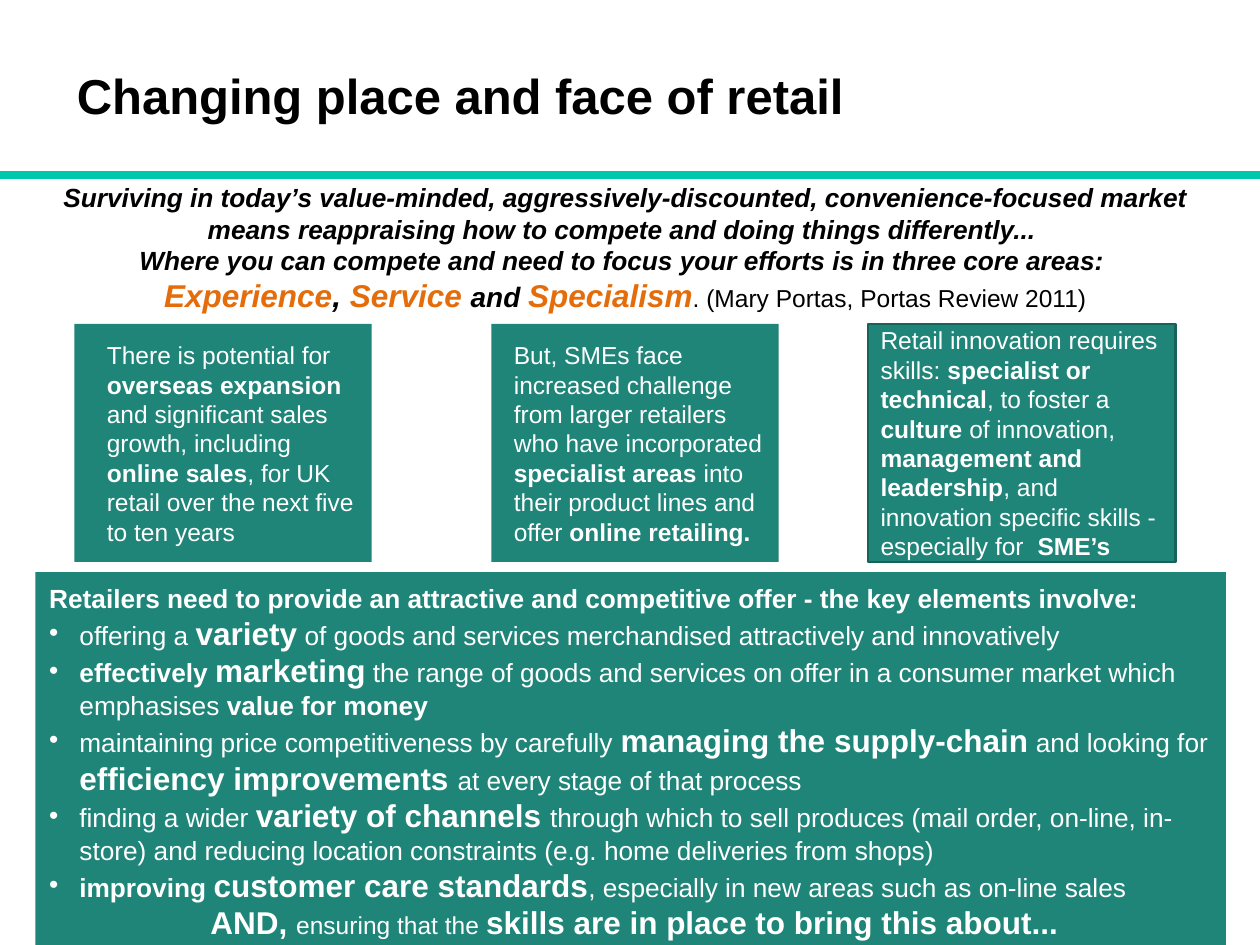
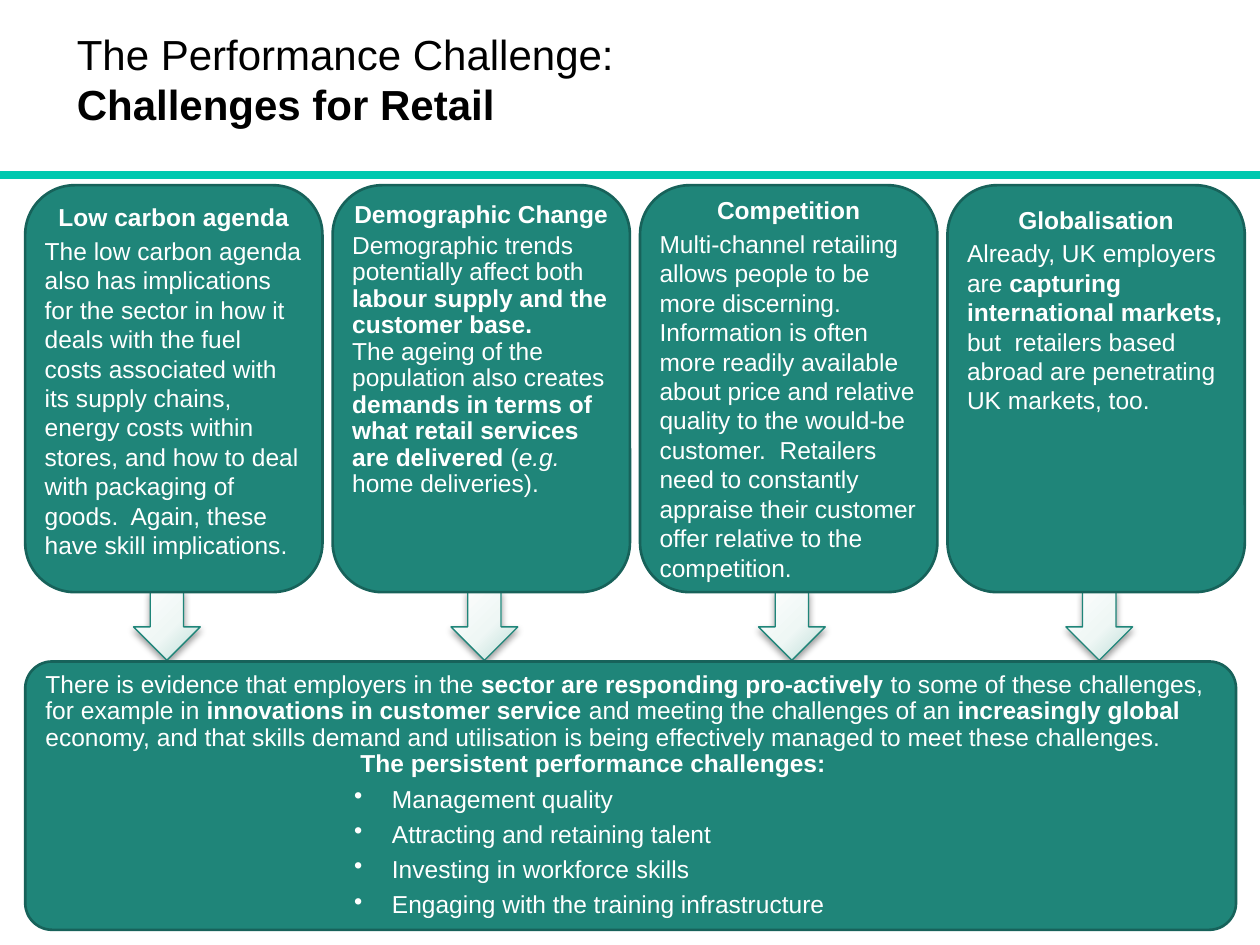
from lxml import etree
from pptx import Presentation
from pptx.dml.color import RGBColor
from pptx.enum.shapes import MSO_CONNECTOR, MSO_SHAPE
from pptx.enum.text import MSO_ANCHOR, MSO_AUTO_SIZE, PP_ALIGN
from pptx.oxml import parse_xml
from pptx.oxml.ns import nsdecls, qn
from pptx.util import Inches, Pt

RECT, ROUND, ARROW = MSO_SHAPE.RECTANGLE, MSO_SHAPE.ROUNDED_RECTANGLE, MSO_SHAPE.DOWN_ARROW
TOP, MIDDLE = MSO_ANCHOR.TOP, MSO_ANCHOR.MIDDLE
LEFT, CENTER = PP_ALIGN.LEFT, PP_ALIGN.CENTER
STRAIGHT, NO_FIT = MSO_CONNECTOR.STRAIGHT, MSO_AUTO_SIZE.NONE

FONT = "Arial"
TEAL, DARK_TEAL, BAND, ORANGE = "1F8579", "17625A", "00C8AF", "E46C0A"
BLACK, WHITE = "000000", "FFFFFF"
TITLE_AND_BODY, TITLE_ONLY = 1, 5
BAND_ROW = 13.9
HEADING_GAP = 2.4
INSETS = (0.1, 0.05, 0.1, 0.05)
TIGHT = (0.04, 0.04, 0.04, 0.04)

ARROW_FILL = f"""<a:gradFill {nsdecls('a')} rotWithShape="1"><a:gsLst>
<a:gs pos="0"><a:srgbClr val="FEFEFE"/></a:gs>
<a:gs pos="55000"><a:srgbClr val="EFF7F5"/></a:gs>
<a:gs pos="100000"><a:srgbClr val="BADED7"/></a:gs></a:gsLst>
<a:path path="circle"><a:fillToRect l="-40000" t="-90000" r="140000" b="190000"/></a:path>
</a:gradFill>"""
ARROW_SHADOW = f"""<a:effectLst {nsdecls('a')}>
<a:outerShdw blurRad="52000" dist="25400" dir="5400000" rotWithShape="0">
<a:srgbClr val="000000"><a:alpha val="40000"/></a:srgbClr></a:outerShdw></a:effectLst>"""


def rgb(value):
    return RGBColor.from_string(value)


def grid(cells):
    """Length of a number of cells; the slide has 100 columns and 75 rows."""
    return Inches(cells / 10)


def para(*runs, **fmt):
    """A run is a plain string or (text, style letters, size, colour)."""
    return [(r,) if isinstance(r, str) else r for r in runs], fmt


def bold(text, size=None):
    return text, "b", size


class Deck:
    def __init__(self):
        self.prs = Presentation()
        self.prs.slide_width, self.prs.slide_height = grid(100), grid(75)
        self.s = None

    def slide(self, layout, title_row, title, size):
        """Start a slide with its title and the band below it."""
        self.s = self.prs.slides.add_slide(self.prs.slide_layouts[layout])
        sp = self.place(self.s.shapes.title, 5.1, title_row, 69.2, 12.5)
        self.set_text(sp, [title], size, BLACK, MIDDLE)
        line = self.s.shapes.add_connector(
            STRAIGHT, 0, grid(BAND_ROW), grid(100), grid(BAND_ROW))
        line.line.color.rgb, line.line.width = rgb(BAND), Pt(5)
        etree.SubElement(line._element.spPr, qn("a:effectLst"))

    def place(self, sp, x, y, w, h):
        sp.left, sp.top, sp.width, sp.height = map(grid, (x, y, w, h))
        return sp

    def box(self, kind, x, y, w, h, outline=None, back=False):
        sp = self.s.shapes.add_shape(kind, *map(grid, (x, y, w, h)))
        sp.shadow.inherit = False
        sp.fill.solid()
        sp.fill.fore_color.rgb = rgb(TEAL)
        if outline:
            sp.line.color.rgb, sp.line.width = rgb(outline), Pt(1.5)
        else:
            sp.line.fill.background()
        if back:
            self.s.shapes._spTree.insert(2, sp._element)
        return sp

    def arrow(self, x, y, w, h):
        sp = self.box(ARROW, x, y, w, h, TEAL)
        sp.line.width = Pt(0.75)
        props = sp._element.spPr
        for tag, xml in (("a:solidFill", ARROW_FILL), ("a:effectLst", ARROW_SHADOW)):
            props.replace(props.find(qn(tag)), parse_xml(xml))

    def text_box(self, x, y, w, h, paras, size, color):
        sp = self.s.shapes.add_textbox(*map(grid, (x, y, w, h)))
        self.set_text(sp, paras, size, color)

    def body(self, x, y, w, h, paras, size, insets):
        sp = self.place(self.s.placeholders[1], x, y, w, h)
        self.set_text(sp, paras, size, WHITE, TOP, insets)

    def set_text(self, sp, paras, size, color, anchor=TOP, insets=INSETS):
        tf = sp.text_frame
        tf.word_wrap, tf.auto_size, tf.vertical_anchor = True, NO_FIT, anchor
        tf.margin_left, tf.margin_top, tf.margin_right, tf.margin_bottom = map(Inches, insets)
        for i, (runs, fmt) in enumerate(paras):
            p = tf.add_paragraph() if i else tf.paragraphs[0]
            self.style_para(p, **fmt)
            for run in runs:
                self.add_run(p, size, color, *run)

    def style_para(self, p, align=LEFT, indent=(0, 0), bullet=None, spacing=1.0, after=0):
        p.alignment, p.line_spacing = align, spacing
        p.space_before, p.space_after = Pt(0), Pt(after)
        props = p._p.get_or_add_pPr()
        props.set("marL", str(Inches(indent[0])))
        props.set("indent", str(Inches(indent[1])))
        if bullet:
            etree.SubElement(props, qn("a:buChar")).set("char", bullet)
        else:
            etree.SubElement(props, qn("a:buNone"))

    def add_run(self, p, size, color, text, style="", own_size=None, own_color=None):
        if text == "\n":
            p.add_line_break()
            return
        r = p.add_run()
        r.text = text
        r.font.name, r.font.size = FONT, Pt(own_size or size)
        r.font.bold, r.font.italic = "b" in style, "i" in style
        r.font.color.rgb = rgb(own_color or color)


def retail_slide(deck):
    deck.slide(TITLE_AND_BODY, 1.3, para(bold("Changing place and face of retail")), 28)

    # Key elements of the offer
    def item(*runs):
        return para(*runs, indent=(0.24, -0.24), bullet="•")

    deck.box(RECT, 2.8, 45.4, 94.5, 29.6, back=True)
    deck.body(3.5, 46.2, 93.7, 29.2, [
        para(bold("Retailers need to provide an attractive and competitive offer"
                  " - the key elements involve:")),
        item("offering a ", bold("variety", 18),
             " of goods and services merchandised attractively and innovatively"),
        item(bold("effectively "), bold("marketing", 18), bold(" "),
             "the range of goods and services on offer in a consumer market which emphasises ",
             bold("value for money")),
        item("maintaining price competitiveness by carefully ",
             bold("managing the supply-chain", 18), bold(" "), "and looking for ",
             bold("efficiency improvements ", 18), "at every stage of that process"),
        item("finding a wider ", bold("variety of channels ", 18),
             "through which to sell produces (mail order, on-line, in-store) and reducing "
             "location constraints (e.g. home deliveries from shops)"),
        item(bold("improving "), bold("customer care standards", 18),
             ", especially in new areas such as on-line sales"),
        para(bold("AND, ", 18), ("ensuring that the ", "", 14),
             bold("skills are in place to bring this about...", 18),
             align=CENTER, indent=(0.24, -0.24)),
    ], 15, (0.04, 0, 0.04, 0.04))

    # Opening quotation
    deck.text_box(2.8, BAND_ROW, 93.7, 11.6, [
        para(("Surviving in today’s value-minded, aggressively-discounted, convenience-focused "
              "market means reappraising how to compete and doing things differently... ", "bi"),
             align=CENTER),
        para(("Where you can compete and need to focus your efforts is in three core areas: ",
              "bi"), align=CENTER),
        para(("Experience", "bi", 18, ORANGE), (", ", "bi", 18), ("Service ", "bi", 18, ORANGE),
             ("and ", "bi", 16), ("Specialism", "bi", 18, ORANGE),
             (". (Mary Portas, Portas Review 2011)", "", 14), align=CENTER),
    ], 15, BLACK)

    # Three statements
    row, height = 25.7, 18.9
    statements = [
        (5.9, 23.6, 7.5, para(
            "There is potential for ", bold("overseas expansion "),
            "and significant sales growth, including ", bold("online sales"),
            ", for UK retail over the next five to ten years")),
        (39, 22.8, 39.8, para(
            "But, SMEs face increased challenge from larger retailers who have incorporated ",
            bold("specialist areas "), "into their product lines and offer ",
            bold("online retailing."))),
    ]
    for x, width, text_x, words in statements:
        deck.box(RECT, x, row, width, height)
        deck.text_box(text_x, row + 0.8, 22, 17.5, [words], 14, WHITE)
    sp = deck.box(RECT, 68.9, row, 24.4, height, DARK_TEAL)
    deck.set_text(sp, [para(
        "Retail innovation requires skills: ", bold("specialist or technical"),
        ", to foster a ", bold("culture "), "of innovation, ",
        bold("management and leadership"),
        ", and innovation specific skills - especially for  ", bold("SME’s"))],
        14, WHITE, MIDDLE)


def challenge_slide(deck):
    deck.slide(TITLE_ONLY, 0, para("The Performance Challenge:", "\n",
                                   bold("Challenges for Retail")), 24)

    # Challenges: heading, anchor, top inset, line spacing, paragraphs of runs
    cards = [
        ("Low carbon agenda", TOP, 0.02, 1.0, [[
            "The low carbon agenda also has implications for the sector in how it deals with "
            "the fuel costs associated with its supply chains, energy costs within stores, and "
            "how to deal with packaging of goods.  Again, these have skill implications."]]),
        ("Demographic Change", TOP, 0.02, 0.9, [
            ["Demographic trends potentially affect both ",
             bold("labour supply and the customer base.")],
            ["The ageing of the population also creates ",
             bold("demands in terms of what retail services are delivered "),
             "(", ("e.g.", "i"), " home deliveries)."]]),
        ("Competition", MIDDLE, 0.04, 1.0, [[
            "Multi-channel retailing allows people to be more discerning.  Information is often "
            "more readily available about price and relative quality to the would-be customer.  "
            "Retailers need to constantly appraise their customer offer relative to the "
            "competition."]]),
        ("Globalisation", TOP, 0.04, 1.0, [
            ["Already, UK employers are ", bold("capturing international markets, "),
             "but  retailers based abroad are penetrating"],
            ["UK markets, too."]]),
    ]
    left, step = 2, 24.4
    for i in range(len(cards)):
        nudge = 9.4 if i else 8.6
        deck.arrow(left + i * step + nudge, 46.9, 5.3, 5.5)
    for i, (heading, anchor, top, spacing, texts) in enumerate(cards):
        sp = deck.box(ROUND, left + i * step, 14.7, 23.6, 32.3, DARK_TEAL)
        paras = [para(bold(heading), align=CENTER, spacing=spacing, after=HEADING_GAP)]
        paras += [para(*runs, spacing=spacing) for runs in texts]
        deck.set_text(sp, paras, 14, WHITE, anchor, (TIGHT[0], top, *TIGHT[2:]))

    # Response and persistent challenges
    sp = deck.box(ROUND, left, 52.5, 96.1, 21.3, DARK_TEAL)
    sp.adjustments[0] = 0.1
    paras = [
        para("There is evidence that employers in the ",
             bold("sector are responding pro-actively "),
             "to some of these challenges, for example in ",
             bold("innovations in customer service "),
             "and meeting the challenges of an ", bold("increasingly global "),
             "economy, and that skills demand and utilisation is being effectively managed to "
             "meet these challenges.", spacing=0.9),
        para(bold("The persistent performance challenges:"),
             indent=(2.5, 0), spacing=0.9, after=5),
    ]
    paras += [para(name, indent=(2.75, -0.3), bullet="•", spacing=0.9, after=5) for name in (
        "Management quality", "Attracting and retaining talent",
        "Investing in workforce skills", "Engaging with the training infrastructure")]
    deck.set_text(sp, paras, 14, WHITE, MIDDLE)


def main():
    deck = Deck()
    retail_slide(deck)
    challenge_slide(deck)
    deck.prs.save("out.pptx")


if __name__ == "__main__":
    main()
